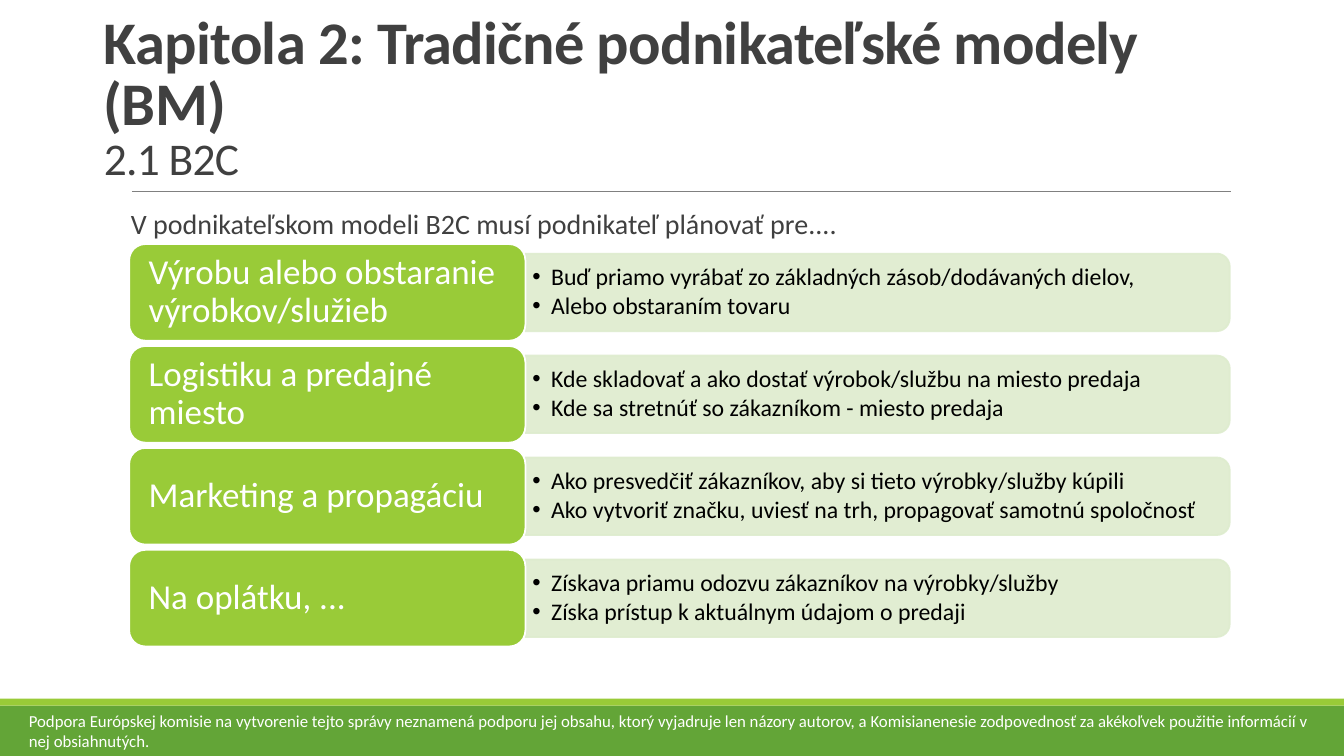
from lxml import etree
from pptx import Presentation
from pptx.dml.color import RGBColor
from pptx.enum.shapes import MSO_CONNECTOR, MSO_SHAPE
from pptx.enum.text import MSO_ANCHOR, MSO_AUTO_SIZE, PP_ALIGN
from pptx.oxml.ns import qn
from pptx.util import Pt

RECT, ROUND = MSO_SHAPE.RECTANGLE, MSO_SHAPE.ROUNDED_RECTANGLE
ROUND_TOP = MSO_SHAPE.ROUND_2_SAME_RECTANGLE
STRAIGHT = MSO_CONNECTOR.STRAIGHT
TOP, MIDDLE, BOTTOM = MSO_ANCHOR.TOP, MSO_ANCHOR.MIDDLE, MSO_ANCHOR.BOTTOM
LEFT, NO_FIT = PP_ALIGN.LEFT, MSO_AUTO_SIZE.NONE

DARK_GREEN = RGBColor(0x63, 0xA5, 0x37)
GREEN = RGBColor(0x99, 0xCB, 0x38)
PALE_GREEN = RGBColor(0xDE, 0xEC, 0xCE)
GREY = RGBColor(0x80, 0x80, 0x80)
DARK_GREY = RGBColor(0x40, 0x40, 0x40)
WHITE = RGBColor(0xFF, 0xFF, 0xFF)
BLACK = RGBColor(0, 0, 0)

SLIDE_W, SLIDE_H = 960, 540
ROWS_TOP, ROW_PITCH = 174.4, 72.8
LABEL_X, LABEL_W, LABEL_H = 92.3, 283, 69
PANEL_X, PANEL_W, PANEL_H = 375.2, 503.2, 55.4

ROWS = [
    ("Výrobu alebo obstaranie výrobkov/služieb",
     ["Buď priamo vyrábať zo základných zásob/dodávaných dielov,",
      "Alebo obstaraním tovaru"]),
    ("Logistiku a predajné miesto",
     ["Kde skladovať a ako dostať výrobok/službu na miesto predaja",
      "Kde sa stretnúť so zákazníkom - miesto predaja"]),
    ("Marketing a propagáciu",
     ["Ako presvedčiť zákazníkov, aby si tieto výrobky/služby kúpili",
      "Ako vytvoriť značku, uviesť na trh, propagovať samotnú spoločnosť"]),
    ("Na oplátku, ...",
     ["Získava priamu odozvu zákazníkov na výrobky/služby",
      "Získa prístup k aktuálnym údajom o predaji"]),
]
INTRO = "V podnikateľskom modeli B2C musí podnikateľ plánovať pre...."
DISCLAIMER = (
    "Podpora Európskej komisie na vytvorenie tejto správy neznamená podporu "
    "jej obsahu, ktorý vyjadruje len názory autorov, a Komisianenesie "
    "zodpovednosť za akékoľvek použitie informácií v nej obsiahnutých.")


def set_attrs(obj, values):
    for name, value in values.items():
        setattr(obj, name, value)


def add_run(p, text, size, color, bold=False):
    r = p.add_run()
    r.text = text
    set_attrs(r.font, {"name": "Calibri", "size": Pt(size), "bold": bold})
    r.font.color.rgb = color
    return r


def format_frame(tf, anchor, inset_x=7.2, inset_y=3.6, wrap=True):
    set_attrs(tf, {
        "word_wrap": wrap, "auto_size": NO_FIT, "vertical_anchor": anchor,
        "margin_left": Pt(inset_x), "margin_right": Pt(inset_x),
        "margin_top": Pt(inset_y), "margin_bottom": Pt(inset_y)})


def add_box(slide, kind, x, y, w, h, fill, line=None):
    sp = slide.shapes.add_shape(kind, Pt(x), Pt(y), Pt(w), Pt(h))
    sp.shadow.inherit = False
    sp.fill.solid()
    sp.fill.fore_color.rgb = fill
    if line is None:
        sp.line.fill.background()
    else:
        sp.line.color.rgb = line
        sp.line.width = Pt(1.25)
    return sp


def add_text(slide, text, x, y, w, h, size, color, wrap=True):
    sp = slide.shapes.add_textbox(Pt(x), Pt(y), Pt(w), Pt(h))
    format_frame(sp.text_frame, TOP, wrap=wrap)
    add_run(sp.text_frame.paragraphs[0], text, size, color)


def add_rule(slide, x1, x2, y):
    line = slide.shapes.add_connector(STRAIGHT, Pt(x1), Pt(y), Pt(x2), Pt(y))
    line.line.color.rgb = GREY
    line.line.width = Pt(0.5)
    etree.SubElement(line._element.spPr, qn("a:effectLst"))


def add_bullet(p):
    pPr = p._p.get_or_add_pPr()
    pPr.set("marL", str(Pt(13.5)))
    pPr.set("indent", str(Pt(-13.5)))
    etree.SubElement(pPr, qn("a:buFont")).set("typeface", "Arial")
    etree.SubElement(pPr, qn("a:buChar")).set("char", "•")


def add_panel(slide, middle, items):
    # A quarter turn puts the rounded corners on the right
    sp = add_box(slide, ROUND_TOP, PANEL_X + (PANEL_W - PANEL_H) / 2,
                 middle - PANEL_W / 2, PANEL_H, PANEL_W,
                 PALE_GREEN, PALE_GREEN)
    sp.rotation = 90
    for color in sp._element.spPr.iter(qn("a:srgbClr")):
        etree.SubElement(color, qn("a:alpha")).set("val", "90000")

    # Upright bullet text
    box = slide.shapes.add_textbox(Pt(PANEL_X), Pt(middle - 25),
                                   Pt(PANEL_W - 2.7), Pt(50))
    tf = box.text_frame
    format_frame(tf, MIDDLE, 5, 2.7)
    for i, item in enumerate(items):
        p = tf.paragraphs[0] if i == 0 else tf.add_paragraph()
        set_attrs(p, {"line_spacing": 0.9, "space_after": Pt(2.5)})
        add_bullet(p)
        add_run(p, item, 17, BLACK)


def add_label(slide, y, text):
    sp = add_box(slide, ROUND, LABEL_X, y, LABEL_W, LABEL_H, GREEN, WHITE)
    format_frame(sp.text_frame, MIDDLE, 10.6, 7)
    p = sp.text_frame.paragraphs[0]
    set_attrs(p, {"line_spacing": 0.9, "alignment": LEFT})
    add_run(p, text, 25, WHITE)


def fill_title(title):
    set_attrs(title, {"left": Pt(67), "top": Pt(22.3),
                      "width": Pt(811.4), "height": Pt(113)})
    format_frame(title.text_frame, BOTTOM)
    p = title.text_frame.paragraphs[0]
    set_attrs(p, {"line_spacing": 0.85, "alignment": LEFT})
    heading = add_run(p, "Kapitola 2: Tradičné podnikateľské modely (BM)",
                      43.2, DARK_GREY, bold=True)
    p.add_line_break()
    section = add_run(p, "2.1 B2C", 32.4, DARK_GREY)
    for r in (heading, section):
        r.font._element.set("spc", "-50")


def main():
    prs = Presentation()
    set_attrs(prs, {"slide_width": Pt(SLIDE_W), "slide_height": Pt(SLIDE_H)})
    slide = prs.slides.add_slide(prs.slide_layouts[5])

    # Footer bands, title and rule
    add_box(slide, RECT, 0, 504, SLIDE_W, 36, DARK_GREEN)
    add_box(slide, RECT, 0, 499, SLIDE_W, 5, GREEN)
    fill_title(slide.shapes.title)
    add_rule(slide, 94.3, 879, 136.8)

    # Planning rows
    for i, (label, items) in enumerate(ROWS):
        y = ROWS_TOP + i * ROW_PITCH
        add_panel(slide, y + LABEL_H / 2, items)
        add_label(slide, y, label)

    # Intro and disclaimer
    add_text(slide, INTRO, 86.4, 144, 523.4, 31.5, 20, DARK_GREY, wrap=False)
    add_text(slide, DISCLAIMER, 13.5, 504, 932.4, 36, 12, WHITE)

    prs.save("out.pptx")


if __name__ == "__main__":
    main()
